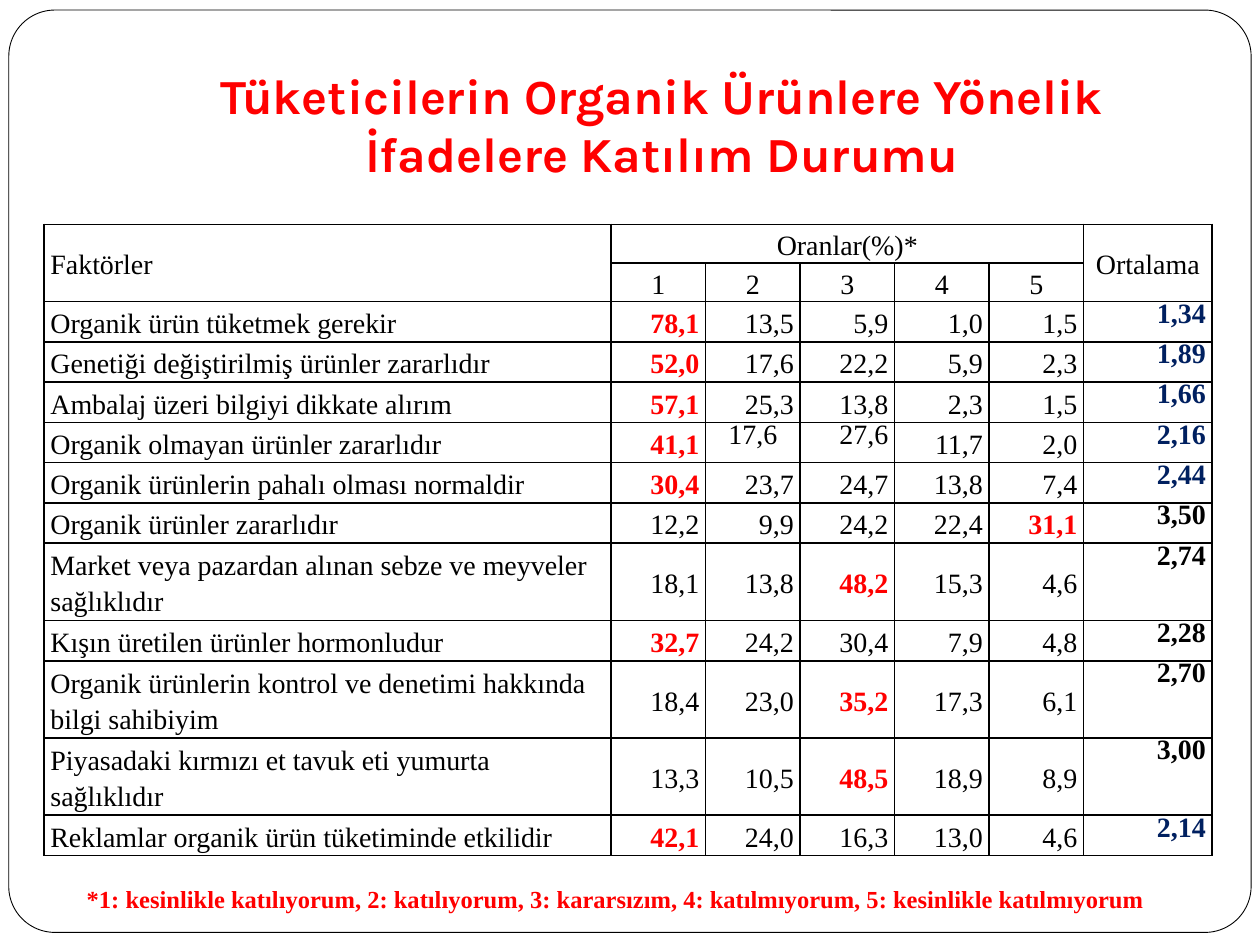
from lxml import etree
from pptx import Presentation
from pptx.dml.color import RGBColor
from pptx.enum.shapes import MSO_SHAPE
from pptx.enum.text import MSO_ANCHOR, PP_ALIGN
from pptx.oxml.ns import qn
from pptx.util import Inches, Pt

LEFT, MID, RIGHT, JUST = PP_ALIGN.LEFT, PP_ALIGN.CENTER, PP_ALIGN.RIGHT, PP_ALIGN.JUSTIFY
TOP, CENTER, BOTTOM = MSO_ANCHOR.TOP, MSO_ANCHOR.MIDDLE, MSO_ANCHOR.BOTTOM
ROUND = MSO_SHAPE.ROUNDED_RECTANGLE
BLACK = RGBColor(0x00, 0x00, 0x00)
WHITE = RGBColor(0xFF, 0xFF, 0xFF)
RED = RGBColor(0xFF, 0x00, 0x00)
NAVY = RGBColor(0x00, 0x20, 0x60)
SERIF = "Times New Roman"


def write(frame, text, size=16, font=SERIF, color=BLACK, bold=False,
          align=LEFT, line=None, after=0):
    para = frame.paragraphs[0]
    para.alignment = align
    para.space_after = Pt(after)
    if line:
        para.line_spacing = line
    run = para.add_run()
    run.text = text
    run.font.size = Pt(size)
    run.font.name = font
    run.font.bold = bold
    run.font.color.rgb = color


def border(cell):
    props = cell._tc.get_or_add_tcPr()
    for pos, side in enumerate(("lnL", "lnR", "lnT", "lnB")):
        edge = etree.Element(qn("a:" + side), w=str(Pt(1)))
        fill = etree.SubElement(edge, qn("a:solidFill"))
        etree.SubElement(fill, qn("a:srgbClr"), val=str(BLACK))
        props.insert(pos, edge)


prs = Presentation()
prs.slide_width, prs.slide_height = Inches(10), Inches(7.5)
slide = prs.slides.add_slide(prs.slide_layouts[6])

# Rounded frame
frame = slide.shapes.add_shape(ROUND, Inches(0.07), Inches(0.08), Inches(9.86), Inches(7.32))
frame.adjustments[0] = 0.05
frame.shadow.inherit = False
frame.fill.solid()
frame.fill.fore_color.rgb = WHITE
frame.line.color.rgb = BLACK
frame.line.width = Pt(0.5)

# Title
title = slide.shapes.add_textbox(Inches(1), Inches(0.3), Inches(8.5), Inches(1.25)).text_frame
title.word_wrap = True
title.vertical_anchor = BOTTOM
title.margin_bottom = Inches(0.1)
write(title, "Tüketicilerin Organik Ürünlere Yönelik İfadelere Katılım Durumu",
      size=28, font="Karla", color=RED, bold=True, align=MID)

# Survey: statement, shares for answers 1 to 5, mean, colour of the mean
survey = [
    ("Organik ürün tüketmek gerekir", "78,1 13,5 5,9 1,0 1,5", "1,34", NAVY),
    ("Genetiği değiştirilmiş ürünler zararlıdır", "52,0 17,6 22,2 5,9 2,3", "1,89", NAVY),
    ("Ambalaj üzeri bilgiyi dikkate alırım", "57,1 25,3 13,8 2,3 1,5", "1,66", NAVY),
    ("Organik olmayan ürünler zararlıdır", "41,1 17,6 27,6 11,7 2,0", "2,16", NAVY),
    ("Organik ürünlerin pahalı olması normaldir", "30,4 23,7 24,7 13,8 7,4", "2,44", NAVY),
    ("Organik ürünler zararlıdır", "12,2 9,9 24,2 22,4 31,1", "3,50", BLACK),
    ("Market veya pazardan alınan sebze ve meyveler sağlıklıdır",
     "18,1 13,8 48,2 15,3 4,6", "2,74", BLACK),
    ("Kışın üretilen ürünler hormonludur", "32,7 24,2 30,4 7,9 4,8", "2,28", BLACK),
    ("Organik ürünlerin kontrol ve denetimi hakkında bilgi sahibiyim",
     "18,4 23,0 35,2 17,3 6,1", "2,70", BLACK),
    ("Piyasadaki kırmızı et tavuk eti yumurta sağlıklıdır",
     "13,3 10,5 48,5 18,9 8,9", "3,00", BLACK),
    ("Reklamlar organik ürün tüketiminde etkilidir", "42,1 24,0 16,3 13,0 4,6", "2,14", NAVY),
]
widths = [4.5] + [0.75] * 5 + [1.02]
heights = [0.3] * 2 + [0.6 if len(item[0]) > 50 else 0.32 for item in survey]

# Table grid
table = slide.shapes.add_table(len(heights), len(widths), Inches(0.35), Inches(1.78),
                               Inches(sum(widths)), Inches(sum(heights))).table
table.first_row = table.horz_banding = False
for col, width in zip(table.columns, widths):
    col.width = Inches(width)
for row, height in zip(table.rows, heights):
    row.height = Inches(height)
for cell in table.iter_cells():
    cell.margin_left = cell.margin_right = Inches(0.05)
    cell.margin_top = cell.margin_bottom = 0
    cell.vertical_anchor = CENTER
    cell.fill.background()
    border(cell)

# Header rows
table.cell(0, 0).merge(table.cell(1, 0))
table.cell(0, 1).merge(table.cell(0, 5))
table.cell(0, 6).merge(table.cell(1, 6))
heads = [(0, 0, "Faktörler"), (0, 1, "Oranlar(%)*"), (0, 6, "Ortalama")]
heads += [(1, n, str(n)) for n in range(1, 6)]
for r, c, text in heads:
    write(table.cell(r, c).text_frame, text, align=MID if c else LEFT, line=1.15, after=10)

# Survey rows: the largest share is red, fixed-pitch cells sit at the top
raised = {(5, 2): MID, (5, 3): RIGHT}
for r, (label, shares, mean, tint) in enumerate(survey, 2):
    cell = table.cell(r, 0)
    cell.fill.solid()
    cell.fill.fore_color.rgb = WHITE
    write(cell.text_frame, label, line=1.15, after=10)

    shares = shares.split()
    peak = max(shares, key=lambda s: float(s.replace(",", ".")))
    for c, share in enumerate(shares, 1):
        cell = table.cell(r, c)
        high = (r, c) in raised
        cell.vertical_anchor = TOP if high else CENTER
        write(cell.text_frame, share, color=RED if share == peak else BLACK,
              bold=share == peak, align=raised.get((r, c), RIGHT),
              line=Pt(16) if high else 1.15, after=10)

    cell = table.cell(r, 6)
    cell.vertical_anchor = TOP
    write(cell.text_frame, mean, color=tint, bold=True, align=RIGHT, line=Pt(16), after=10)

# Scale note
note = slide.shapes.add_textbox(Inches(0.59), Inches(6.96), Inches(8.9), Inches(0.34)).text_frame
note.word_wrap = True
note.vertical_anchor = CENTER
write(note, "*1: kesinlikle katılıyorum, 2: katılıyorum, 3: kararsızım, "
      "4: katılmıyorum, 5: kesinlikle katılmıyorum",
      size=14, color=RED, bold=True, align=JUST)

prs.save("out.pptx")
